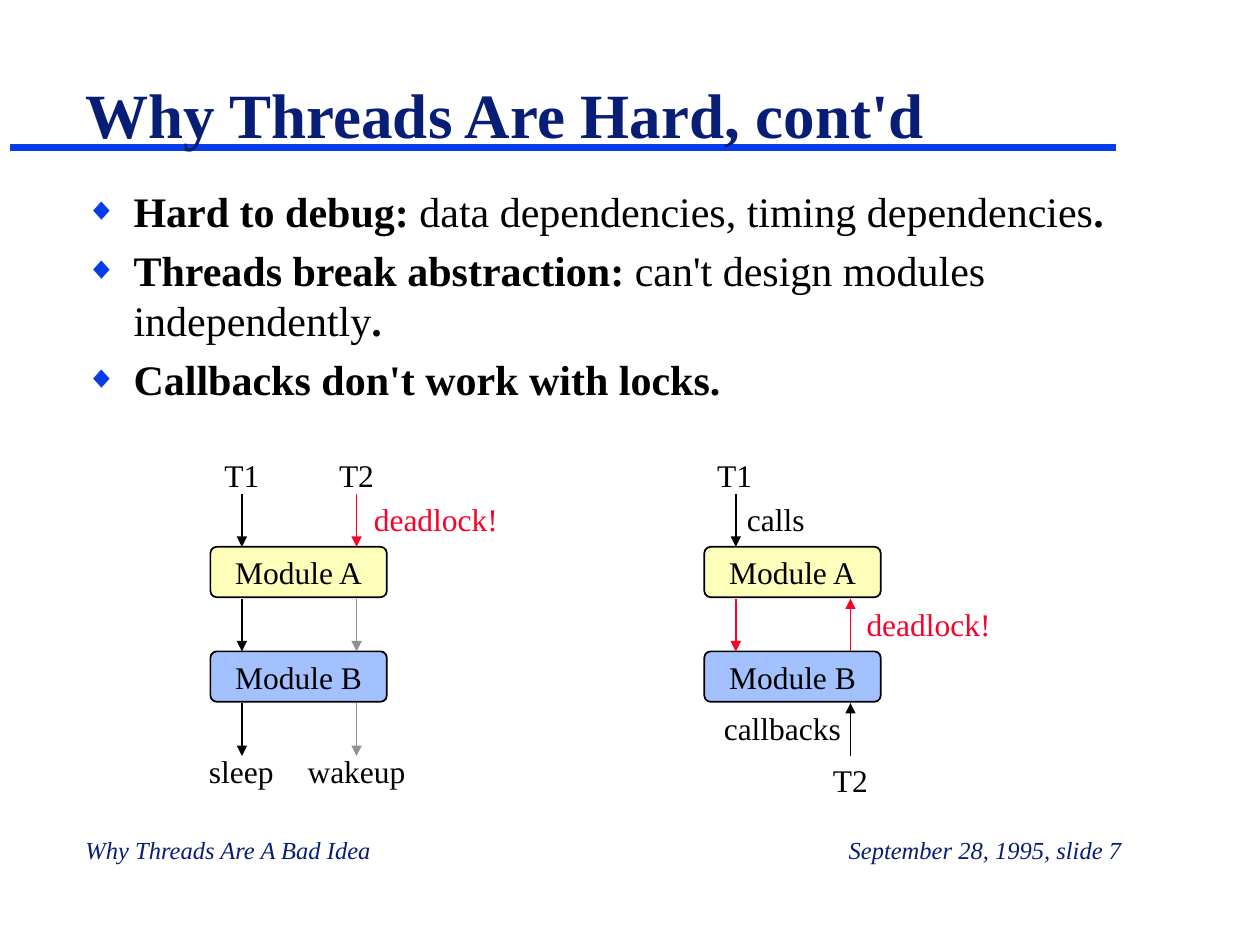
"""Build the slide on why threads are hard."""
from lxml import etree
from pptx import Presentation
from pptx.dml.color import RGBColor
from pptx.enum.shapes import MSO_CONNECTOR, MSO_SHAPE
from pptx.enum.text import MSO_ANCHOR, MSO_AUTO_SIZE, PP_ALIGN
from pptx.oxml.ns import qn
from pptx.util import Inches, Pt

STRAIGHT = MSO_CONNECTOR.STRAIGHT
ROUNDED = MSO_SHAPE.ROUNDED_RECTANGLE
LEFT, CENTER, RIGHT = PP_ALIGN.LEFT, PP_ALIGN.CENTER, PP_ALIGN.RIGHT
TOP, MIDDLE, BOTTOM = MSO_ANCHOR.TOP, MSO_ANCHOR.MIDDLE, MSO_ANCHOR.BOTTOM
FIXED = MSO_AUTO_SIZE.NONE

FONT = "Times New Roman"
COLORS = {
    "navy": "081D75", "blue": "063DE8", "black": "000000", "red": "FC0128",
    "gray": "919191", "module_a": "FCFEB9", "module_b": "A2C1FE",
}
THREAD_X = (0.25, 1.16)
MODULE_W, MODULE_H = 1.4, 0.4
FIRST_ARROW_Y, ROW_PITCH, ARROW_LENGTH = 3.92, 0.83, 0.42

POINTS = [
    ("Hard to debug: ", "data dependencies, timing dependencies", "."),
    ("Threads break abstraction: ", "can't design modules independently", "."),
    ("Callbacks don't work with locks.",),
]
DIAGRAMS = [
    {
        "left": 1.67,
        "arrows": [
            (0, 0, "black", False), (1, 0, "red", False),
            (0, 1, "black", False), (1, 1, "gray", False),
            (0, 2, "black", False), (1, 2, "gray", False),
        ],
        "labels": [
            ("T1", -0.09, 3.57, 0.68, CENTER, "black"),
            ("T2", 0.74, 3.57, 0.84, CENTER, "black"),
            ("deadlock!", 1.16, 3.92, 1.26, CENTER, "red"),
            ("sleep", -0.26, 5.92, 1.01, CENTER, "black"),
            ("wakeup", 0.49, 5.92, 1.34, CENTER, "black"),
        ],
    },
    {
        "left": 5.59,
        "arrows": [
            (0, 0, "black", False), (0, 1, "red", False),
            (1, 1, "red", True), (1, 2, "black", True),
        ],
        "labels": [
            ("T1", -0.1, 3.57, 0.68, CENTER, "black"),
            ("calls", 0.24, 3.92, 1.26, LEFT, "black"),
            ("deadlock!", 1.15, 4.75, 1.26, CENTER, "red"),
            ("callbacks", -0.01, 5.58, 1.26, CENTER, "black"),
            ("T2", 0.74, 5.99, 0.84, CENTER, "black"),
        ],
    },
]


def rgb(color):
    """Return the named colour."""
    return RGBColor.from_string(COLORS[color])


def style_run(run, size, color, bold=False, italic=False):
    """Set the look of one run."""
    font = run.font
    font.name, font.size, font.bold, font.italic = FONT, Pt(size), bold, italic
    font.color.rgb = rgb(color)


def place(shape, left, top, width, height):
    """Move and size a shape in inches."""
    shape.left, shape.top = Inches(left), Inches(top)
    shape.width, shape.height = Inches(width), Inches(height)


def add_title(slide, title_text):
    """Fill the title placeholder."""
    title = slide.shapes.title
    place(title, 0.58, 0.04, 8.33, 1.21)
    frame = title.text_frame
    frame.text = title_text
    frame.auto_size, frame.vertical_anchor = FIXED, BOTTOM
    frame.paragraphs[0].alignment = LEFT
    style_run(frame.paragraphs[0].runs[0], 36, "navy", bold=True)


def set_bullet(paragraph):
    """Give a paragraph a hanging blue diamond."""
    properties = paragraph._p.get_or_add_pPr()
    properties.set("marL", str(Inches(0.38)))
    properties.set("indent", str(-Inches(0.38)))
    bullet_color = etree.SubElement(properties, qn("a:buClr"))
    etree.SubElement(bullet_color, qn("a:srgbClr"), val=COLORS["blue"])
    etree.SubElement(properties, qn("a:buSzPct"), val="75000")
    etree.SubElement(properties, qn("a:buFont"), typeface=FONT)
    etree.SubElement(properties, qn("a:buChar"), char="◆")


def add_points(slide, points):
    """Fill the body placeholder, alternating bold and plain runs."""
    body = slide.placeholders[1]
    place(body, 0.58, 1.42, 8.42, 5)
    frame = body.text_frame
    frame.auto_size, frame.vertical_anchor = FIXED, TOP
    for index, parts in enumerate(points):
        paragraph = frame.add_paragraph() if index else frame.paragraphs[0]
        paragraph.space_before = Pt(5 if index else 0)
        set_bullet(paragraph)
        for position, part in enumerate(parts):
            run = paragraph.add_run()
            run.text = part
            style_run(run, 24, "black", bold=position % 2 == 0)


def add_line(slide, start, end, color, width):
    """Draw a straight line between two points."""
    line = slide.shapes.add_connector(STRAIGHT, *map(Inches, start + end))
    line.line.color.rgb = rgb(color)
    line.line.width = Pt(width)
    etree.SubElement(line.element.spPr, qn("a:effectLst"))
    return line


def add_arrow(slide, x, row, color, upward):
    """Draw a thread's arrow in one row between modules."""
    top = FIRST_ARROW_Y + row * ROW_PITCH
    ends = [(x, top), (x, top + ARROW_LENGTH)]
    start, end = reversed(ends) if upward else ends
    arrow = add_line(slide, start, end, color, 1)
    etree.SubElement(arrow.line._get_or_add_ln(), qn("a:tailEnd"), type="triangle")


def add_label(slide, text, box, align, color, size=18, italic=False):
    """Add a line of text."""
    label = slide.shapes.add_textbox(*map(Inches, box))
    frame = label.text_frame
    frame.word_wrap = True
    frame.text = text
    frame.paragraphs[0].alignment = align
    style_run(frame.paragraphs[0].runs[0], size, color, italic=italic)


def add_module(slide, name, left, top, fill):
    """Add a rounded module box."""
    module = slide.shapes.add_shape(
        ROUNDED, *map(Inches, (left, top, MODULE_W, MODULE_H)))
    module.adjustments[0] = 0.125
    module.shadow.inherit = False
    module.fill.solid()
    module.fill.fore_color.rgb = rgb(fill)
    module.line.color.rgb = rgb("black")
    module.line.width = Pt(1)
    frame = module.text_frame
    frame.text = name
    frame.word_wrap, frame.vertical_anchor = False, MIDDLE
    frame.paragraphs[0].alignment = CENTER
    style_run(frame.paragraphs[0].runs[0], 18, "black")


def add_diagram(slide, left, arrows, labels):
    """Add two stacked modules with their threads."""
    modules = [("Module A", "module_a"), ("Module B", "module_b")]
    for row, (name, fill) in enumerate(modules):
        top = FIRST_ARROW_Y + ARROW_LENGTH + row * ROW_PITCH
        add_module(slide, name, left, top, fill)
    for thread, row, color, upward in arrows:
        add_arrow(slide, left + THREAD_X[thread], row, color, upward)
    for text, offset, top, width, align, color in labels:
        add_label(slide, text, (left + offset, top, width, 0.4), align, color)


def main():
    """Build and save the slide."""
    deck = Presentation()
    deck.slide_width, deck.slide_height = Inches(10), Inches(7.5)
    slide = deck.slides.add_slide(deck.slide_layouts[1])
    add_title(slide, "Why Threads Are Hard, cont'd")
    rule = add_line(slide, (0.08, 1.17), (8.86, 1.17), "blue", 4)
    slide.shapes.title.element.addprevious(rule.element)
    add_points(slide, POINTS)
    for diagram in DIAGRAMS:
        add_diagram(slide, **diagram)
    for text, left, align in [("Why Threads Are A Bad Idea", 0.58, LEFT),
                              ("September 28, 1995, slide 7", 4.24, RIGHT)]:
        add_label(slide, text, (left, 6.58, 4.76, 0.33), align, "navy", 14, True)
    deck.save("out.pptx")


if __name__ == "__main__":
    main()
